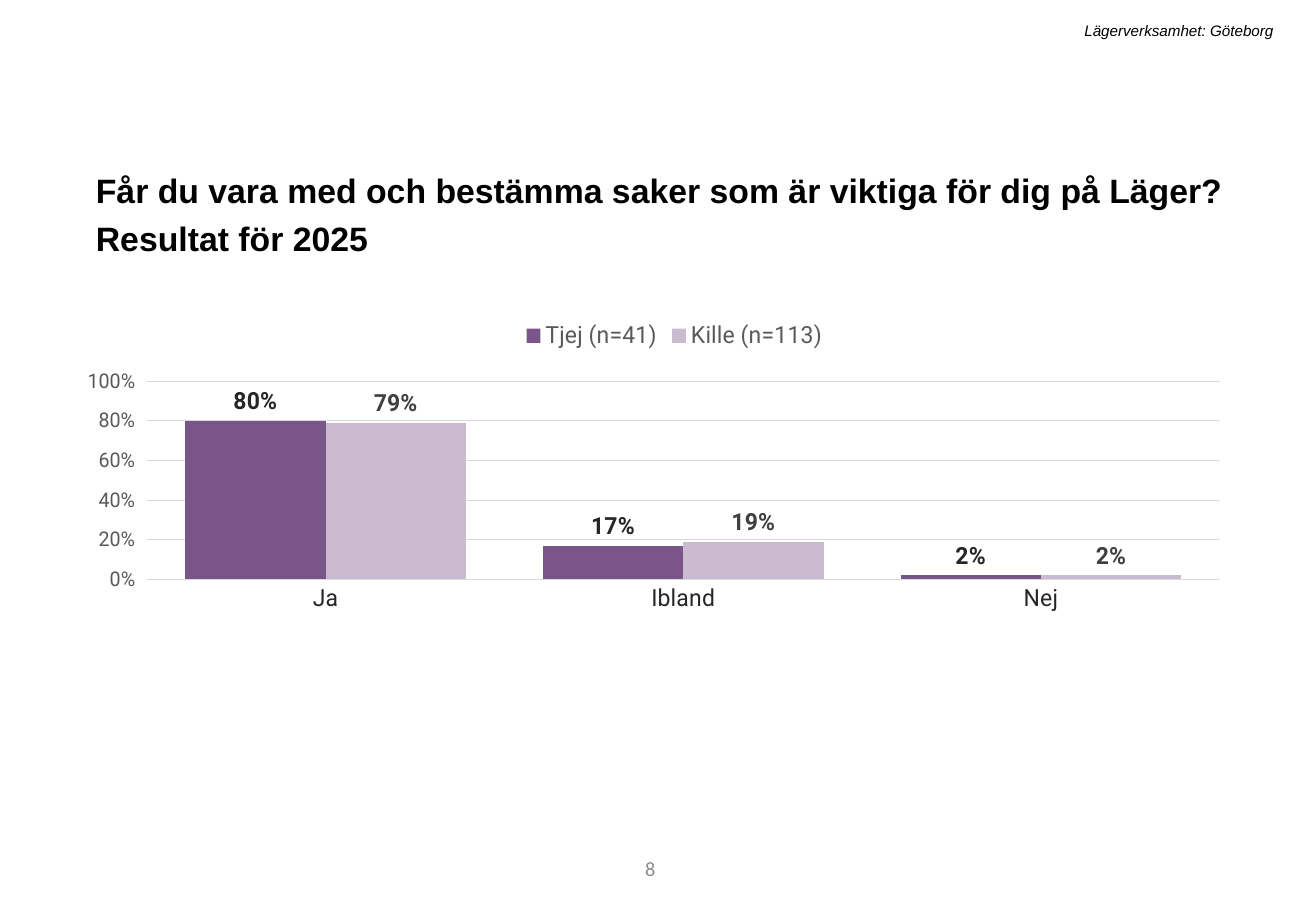
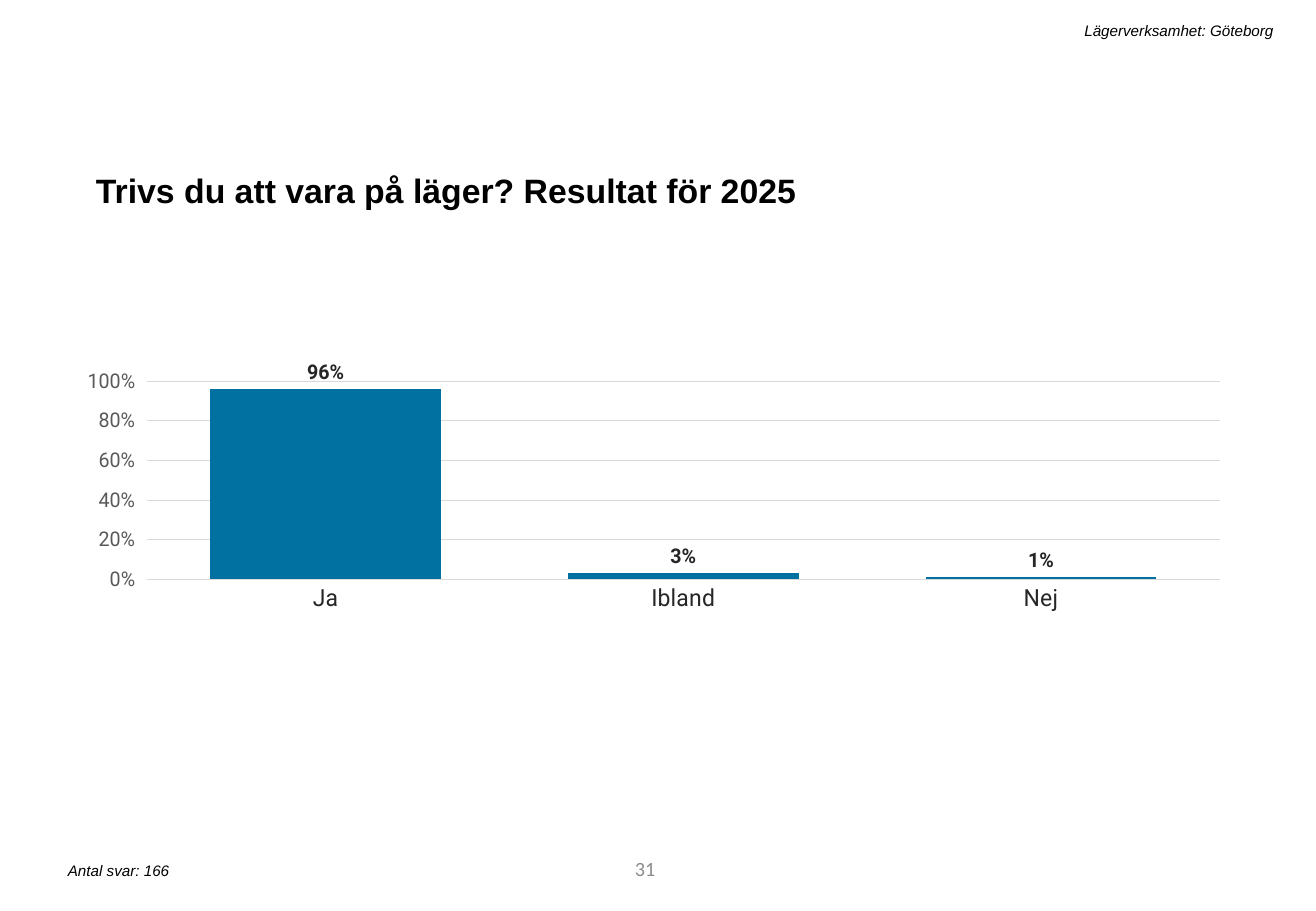
"""Build two survey result slides with column charts."""
import pptx
import pptx.chart.data
import pptx.dml.color
import pptx.enum.chart
import pptx.enum.text
import pptx.oxml
import pptx.oxml.ns
import pptx.util

Cm = pptx.util.Cm
Pt = pptx.util.Pt
ALIGN = pptx.enum.text.PP_ALIGN
ANCHOR = pptx.enum.text.MSO_ANCHOR
FIT = pptx.enum.text.MSO_AUTO_SIZE
TICK = pptx.enum.chart.XL_TICK_MARK
LEFT, CONTENT_WIDTH = 1.75, 23.88


class Theme:
    text_font, chart_font, number_font = "Arial", "Roboto", "Calibri"
    black, dark, medium, gray = "000000", "262626", "404040", "595959"
    number, grid = "8C8C8C", "D9D9D9"
    purple, lilac, blue = "7A5589", "CABBD0", "0071A1"
    title_size, large, normal, small, note_size = 20, 14, 12, 10, 9


def style_font(font, family, size, color, **extra):
    for attribute, value in {"name": family, "size": Pt(size), **extra}.items():
        setattr(font, attribute, value)
    font.color.rgb = pptx.dml.color.RGBColor.from_string(color)


def write_text(box, text, font_style, emphasis, frame_format, paragraph_format):
    frame = box.text_frame
    frame.text = text
    paragraph = frame.paragraphs[0]
    for target, values in ((frame, {"word_wrap": True, **frame_format}), (paragraph, paragraph_format)):
        for attribute, value in values.items():
            setattr(target, attribute, value)
    style_font(paragraph.runs[0].font, *font_style, **emphasis)


title_style = (Theme.text_font, Theme.title_size, Theme.black)
note_style = (Theme.text_font, Theme.note_size, Theme.black)
number_style = (Theme.number_font, Theme.normal, Theme.number)
growing = {"auto_size": FIT.SHAPE_TO_FIT_TEXT, "vertical_anchor": ANCHOR.TOP}
title_paragraph = {"alignment": ALIGN.LEFT, "line_spacing": 1.2, "space_before": Pt(10)}

header_place = (4.37, 0.33, 22.5, 0.64)
number_place = (7.75, 17.65, 6.2, 1.02)
answers_place = (1.17, 17.88, 11.2, 0.64)
chart_place = (1.83, 6.43, CONTENT_WIDTH, 10.03)
plot_layout = {"x": 0.025, "y": 0.154, "w": 0.966, "h": 0.413}

answers = ["Ja", "Ibland", "Nej"]
pages = [
    {
        "title": "Får du vara med och bestämma saker som är viktiga för dig på Läger? Resultat för 2025",
        "title_size": (24.61, 2.21),
        "number": "8",
        "note": None,
        "label_size": Theme.large,
        "series": [
            ("Tjej (n=41)", (0.8, 0.17, 0.02), Theme.purple, Theme.dark),
            ("Kille (n=113)", (0.79, 0.19, 0.02), Theme.lilac, Theme.medium),
        ],
    },
    {
        "title": "Trivs du att vara på läger? Resultat för 2025",
        "title_size": (CONTENT_WIDTH, 1.19),
        "number": "31",
        "note": "Antal svar: 166",
        "label_size": Theme.normal,
        "series": [("Series 1", (0.96, 0.03, 0.01), Theme.blue, Theme.dark)],
    },
]

presentation = pptx.Presentation()
presentation.slide_width, presentation.slide_height = Cm(27.51), Cm(19.05)

for page in pages:
    slide = presentation.slides.add_slide(presentation.slide_layouts[5])
    title = slide.shapes.title
    for side, length in zip(("left", "top", "width", "height"), (LEFT, 3.25, *page["title_size"])):
        setattr(title, side, Cm(length))
    write_text(title, page["title"], title_style, {"bold": True}, growing, title_paragraph)

    captions = [
        (header_place, "Lägerverksamhet: Göteborg", note_style, {"italic": True}, growing, ALIGN.RIGHT),
        (number_place, page["number"], number_style, {}, {"vertical_anchor": ANCHOR.MIDDLE}, ALIGN.RIGHT),
    ]
    if page["note"]:
        captions.append((answers_place, page["note"], note_style, {"italic": True}, growing, ALIGN.LEFT))
    for place, text, font_style, emphasis, frame_format, alignment in captions:
        caption = slide.shapes.add_textbox(*map(Cm, place))
        write_text(caption, text, font_style, emphasis, frame_format, {"alignment": alignment})

    results = pptx.chart.data.CategoryChartData(number_format="0%")
    results.categories = answers
    for series_name, shares, _, _ in page["series"]:
        results.add_series(series_name, shares)
    chart = slide.shapes.add_chart(
        pptx.enum.chart.XL_CHART_TYPE.COLUMN_CLUSTERED, *map(Cm, chart_place), results
    ).chart
    style_font(chart.font, Theme.chart_font, Theme.small, Theme.black)
    chart.has_title = False
    chart.has_legend = len(page["series"]) > 1
    if chart.has_legend:
        chart.legend.position = pptx.enum.chart.XL_LEGEND_POSITION.TOP
        chart.legend.include_in_layout = False
        style_font(chart.legend.font, Theme.chart_font, Theme.large, Theme.gray)

    answer_axis, share_axis = chart.category_axis, chart.value_axis
    axis_formats = {
        answer_axis: {"major_tick_mark": TICK.NONE, "has_major_gridlines": False},
        share_axis: {
            "major_tick_mark": TICK.OUTSIDE,
            "has_major_gridlines": True,
            "minimum_scale": 0,
            "maximum_scale": 1,
            "major_unit": 0.2,
        },
    }
    for axis, values in axis_formats.items():
        for attribute, value in values.items():
            setattr(axis, attribute, value)
    style_font(answer_axis.tick_labels.font, Theme.chart_font, Theme.large, Theme.dark)
    style_font(share_axis.tick_labels.font, Theme.chart_font, Theme.normal, Theme.gray)
    share_axis.tick_labels.number_format = "0%"
    share_axis.tick_labels.number_format_is_linked = False
    share_axis.format.line.fill.background()
    for line in (answer_axis.format.line, share_axis.major_gridlines.format.line):
        line.width = Pt(0.75)
        line.color.rgb = pptx.dml.color.RGBColor.from_string(Theme.grid)

    plot = chart.plots[0]
    plot.gap_width, plot.overlap, plot.vary_by_categories = 55, 0, False
    for series, (_, _, fill_color, label_color) in zip(plot.series, page["series"]):
        series.format.fill.solid()
        series.format.fill.fore_color.rgb = pptx.dml.color.RGBColor.from_string(fill_color)
        label_format = {
            "show_value": True,
            "position": pptx.enum.chart.XL_LABEL_POSITION.OUTSIDE_END,
            "number_format": "0%",
            "number_format_is_linked": False,
        }
        for attribute, value in label_format.items():
            setattr(series.data_labels, attribute, value)
        style_font(series.data_labels.font, Theme.chart_font, page["label_size"], label_color, bold=True)

    plot_area = chart.element.xpath("c:chart/c:plotArea")[0]
    for automatic in plot_area.xpath("c:layout"):
        plot_area.remove(automatic)
    modes = "".join(f'<c:{key}Mode val="edge"/>' for key in "xy")
    sizes = "".join(f'<c:{key} val="{value}"/>' for key, value in plot_layout.items())
    plot_area.insert(0, pptx.oxml.parse_xml(
        f'<c:layout {pptx.oxml.ns.nsdecls("c")}><c:manualLayout>'
        f'<c:layoutTarget val="inner"/>{modes}{sizes}</c:manualLayout></c:layout>'
    ))

presentation.save("out.pptx")
